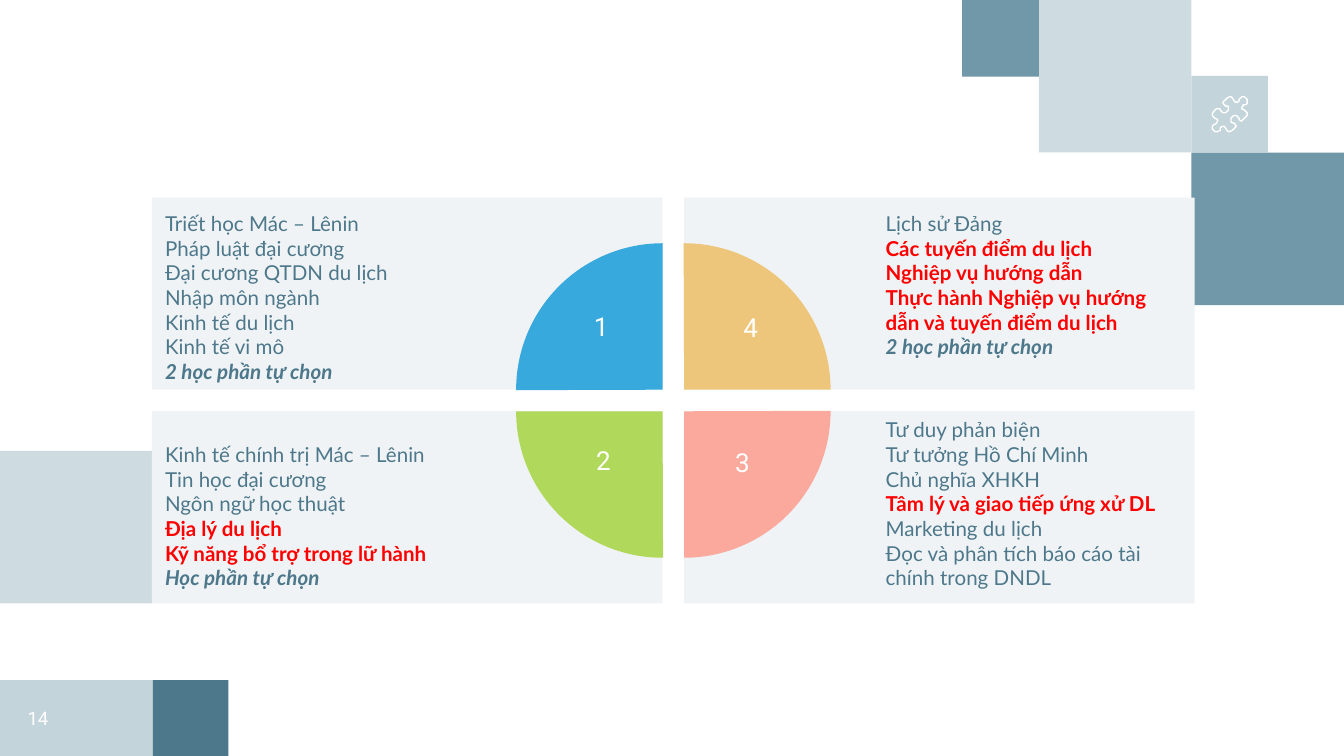
"""Build the slide of study terms around a four-part wheel."""
import pptx
import pptx.util
import pptx.dml.color
import pptx.enum.shapes
import pptx.enum.text
import pptx.oxml.ns
import lxml.etree

RGB = pptx.dml.color.RGBColor
KIND = pptx.enum.shapes.MSO_SHAPE
ANCHOR = pptx.enum.text.MSO_ANCHOR
ALIGN = pptx.enum.text.PP_ALIGN

WHITE = RGB(0xFF, 0xFF, 0xFF)
STEEL = RGB(0x71, 0x98, 0xA9)
PALE = RGB(0xCE, 0xDB, 0xE0)
SLATE = RGB(0x4D, 0x77, 0x8A)
MIST = RGB(0xEF, 0xF3, 0xF5)
RED = RGB(0xFF, 0x00, 0x00)
BLUE = RGB(0x37, 0xA9, 0xDD)
GOLD = RGB(0xED, 0xC6, 0x7B)
PINK = RGB(0xFA, 0xA9, 0x9C)
GREEN = RGB(0xB0, 0xD8, 0x5B)

PX = 4572
WIDE, HIGH = 760, 286
GAP = 32
RADIUS = 218
INSET, ROOM = 20, 300

PUZZLE = [
    (23, 7), (23, 6), (25, 6), (26, 5), (26, 2), (25, 1), (24, 0), (22, 0),
    (21, 1), (20, 2), (20, 3), (19, 4), (17, 4), (15, 1), (14, 0), (13, 0),
    (11, 1), (9, 3), (8, 4), (8, 5), (9, 6), (10, 7), (12, 7), (12, 10),
    (11, 11), (10, 12), (8, 12), (7, 11), (6, 10), (6, 9), (5, 9), (3, 9),
    (1, 11), (0, 13), (0, 14), (2, 16), (4, 17), (4, 18), (3, 20), (1, 21),
    (0, 22), (0, 24), (1, 25), (2, 26), (4, 26), (6, 25), (6, 23), (8, 22),
    (9, 22), (11, 25), (12, 26), (13, 26), (15, 25), (17, 23), (18, 22),
    (17, 21), (17, 20), (14, 19), (14, 16), (15, 15), (16, 14), (18, 14),
    (19, 15), (20, 16), (20, 17), (21, 18), (22, 18), (24, 16), (26, 14),
    (26, 12), (24, 10), (22, 9), (22, 8),
]

PLAIN = (SLATE, False, False)
HOT = (RED, True, False)
NOTE = (SLATE, True, True)

TERMS = [
    (0, 0, "1", BLUE, 0, (638, 158, 60, 86), [
        ("Triết học Mác – Lênin", PLAIN),
        ("Pháp luật đại cương", PLAIN),
        ("Đại cương QTDN du lịch", PLAIN),
        ("Nhập môn ngành", PLAIN),
        ("Kinh tế du lịch", PLAIN),
        ("Kinh tế vi mô", PLAIN),
        ("2 học phần tự chọn", NOTE)]),
    (1, 0, "4", GOLD, 90, (30, 160, 138, 82), [
        ("Lịch sử Đảng", PLAIN),
        ("Các tuyến điểm du lịch", HOT),
        ("Nghiệp vụ hướng dẫn", HOT),
        ("Thực hành Nghiệp vụ hướng dẫn và tuyến điểm du lịch", HOT),
        ("2 học phần tự chọn", NOTE)]),
    (0, 1, "2", GREEN, 270, (632, 40, 80, 86), [
        ("Kinh tế chính trị Mác – Lênin", PLAIN),
        ("Tin học đại cương", PLAIN),
        ("Ngôn ngữ học thuật", PLAIN),
        ("Địa lý du lịch", HOT),
        ("Kỹ năng bổ trợ trong lữ hành", HOT),
        ("Học phần tự chọn", NOTE)]),
    (1, 1, "3", PINK, 180, (50, 42, 74, 82), [
        ("Tư duy phản biện", PLAIN),
        ("Tư tưởng Hồ Chí Minh", PLAIN),
        ("Chủ nghĩa XHKH", PLAIN),
        ("Tâm lý và giao tiếp ứng xử DL", HOT),
        ("Marketing du lịch", PLAIN),
        ("Đọc và phân tích báo cáo tài chính trong DNDL", PLAIN)]),
]


def add_block(slide, kind, box, color, alpha=None):
    """Add a filled shape without line or shadow."""
    shape = slide.shapes.add_shape(kind, *(v * PX for v in box))
    shape.shadow.inherit = False
    shape.fill.solid()
    shape.fill.fore_color.rgb = color
    shape.line.fill.background()
    if alpha:
        qn = pptx.oxml.ns.qn
        tint = shape.fill._xPr.find(".//" + qn("a:srgbClr"))
        lxml.etree.SubElement(tint, qn("a:alpha")).set("val", str(alpha * 1000))
    return shape


def set_font(para, size, face, color):
    """Set the font of a paragraph."""
    para.font.size = pptx.util.Pt(size)
    para.font.name = face
    para.font.color.rgb = color


def add_label(slide, box, text, size):
    """Add a centred white label and return its frame."""
    frame = slide.shapes.add_textbox(*(v * PX for v in box)).text_frame
    frame.word_wrap = True
    para = frame.paragraphs[0]
    para.text = text
    para.alignment = ALIGN.CENTER
    set_font(para, size, "Roboto", WHITE)
    return frame


def add_corner(slide, left, top):
    """Place the upper right squares and the puzzle icon."""
    for x, y, side, color, alpha in [
            (341, 227, 227, STEEL, None), (341, 113, 114, STEEL, 41),
            (114, 0, 227, PALE, None), (0, 0, 114, STEEL, None)]:
        box = (left + x, top + y, side, side)
        add_block(slide, KIND.RECTANGLE, box, color, alpha)
    pen = slide.shapes.build_freeform(*PUZZLE[0], scale=2 * PX)
    pen.add_line_segments(PUZZLE[1:], close=True)
    icon = pen.convert_to_shape((left + 372) * PX, (top + 144) * PX)
    icon.shadow.inherit = False
    icon.fill.background()
    icon.line.color.rgb = WHITE
    icon.line.width = pptx.util.Pt(0.75)


def add_edge(slide, left, top):
    """Place the lower left squares and the page number."""
    for x, y, width, height, color, alpha in [
            (0, 0, 227, 227, PALE, None), (227, 341, 113, 113, SLATE, None),
            (0, 341, 227, 113, STEEL, 41)]:
        box = (left + x, top + y, width, height)
        add_block(slide, KIND.RECTANGLE, box, color, alpha)
    frame = add_label(slide, (left, top + 341, 113, 113), "14", 10)
    frame.vertical_anchor = ANCHOR.MIDDLE


def add_term(slide, left, top, term):
    """Place one term panel with its wheel part and number."""
    col, row, num, color, turn, spot, lines = term
    panel = add_block(slide, KIND.RECTANGLE, (left, top, WIDE, HIGH), MIST)
    frame = panel.text_frame
    frame.word_wrap = True
    frame.vertical_anchor = ANCHOR.BOTTOM if row else ANCHOR.TOP
    frame.margin_left = (ROOM if col else INSET) * PX
    frame.margin_right = (INSET if col else ROOM) * PX
    frame.margin_top = frame.margin_bottom = INSET * PX
    for i, (text, (ink, bold, slant)) in enumerate(lines):
        para = frame.add_paragraph() if i else frame.paragraphs[0]
        para.text = text
        para.alignment = ALIGN.LEFT
        set_font(para, 11, "Lato", ink)
        para.font.bold = bold
        para.font.italic = slant
    x = left + (1 - col) * WIDE - RADIUS
    y = top + (1 - row) * HIGH - RADIUS
    pie = add_block(slide, KIND.PIE, (x, y, 2 * RADIUS, 2 * RADIUS), color)
    pie.adjustments[0] = 107.89
    pie.adjustments[1] = 162
    pie.rotation = turn
    add_label(slide, (left + spot[0], top + spot[1], *spot[2:]), num, 14)


def add_wheel(slide, left, top):
    """Place the four terms in a grid."""
    for term in TERMS:
        x = left + term[0] * (WIDE + GAP)
        y = top + term[1] * (HIGH + GAP)
        add_term(slide, x, y, term)


def main():
    """Build and save the slide."""
    deck = pptx.Presentation()
    deck.slide_width = 2000 * PX
    deck.slide_height = 1125 * PX
    slide = deck.slides.add_slide(deck.slide_layouts[6])
    add_corner(slide, 1432, 0)
    add_edge(slide, 0, 671)
    add_wheel(slide, 226, 294)
    deck.save("out.pptx")


if __name__ == "__main__":
    main()
